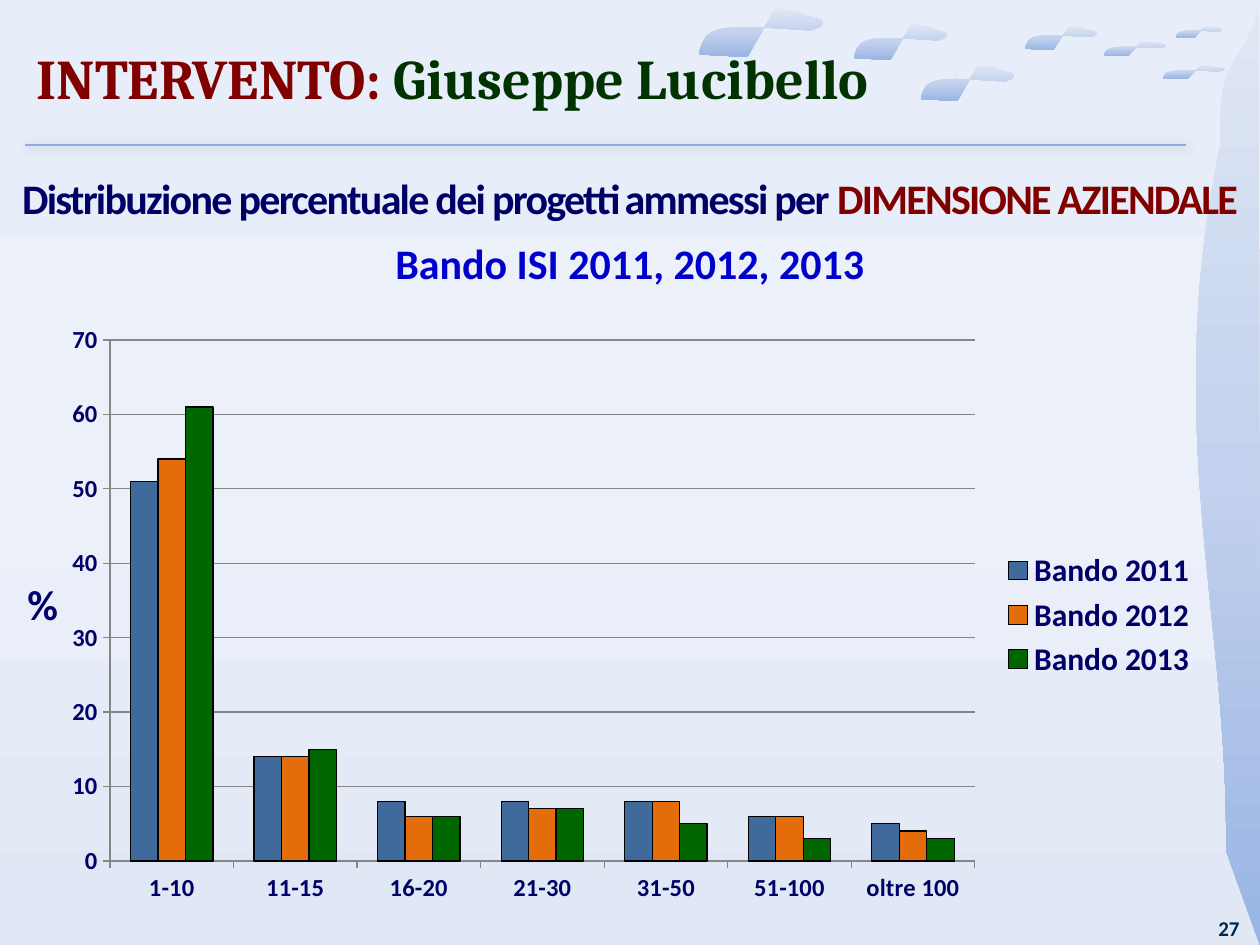
from copy import deepcopy

from lxml import etree
from pptx import Presentation
from pptx.chart.data import CategoryChartData
from pptx.dml.color import RGBColor
from pptx.enum.chart import XL_CHART_TYPE, XL_LEGEND_POSITION, XL_TICK_MARK
from pptx.enum.shapes import MSO_CONNECTOR
from pptx.enum.text import MSO_ANCHOR, MSO_AUTO_SIZE, PP_ALIGN
from pptx.oxml import parse_xml
from pptx.oxml.ns import nsdecls, qn
from pptx.util import Emu, Pt

COLUMNS = XL_CHART_TYPE.COLUMN_CLUSTERED
LEGEND_RIGHT = XL_LEGEND_POSITION.RIGHT
TICK_OUTSIDE = XL_TICK_MARK.OUTSIDE
TICK_NONE = XL_TICK_MARK.NONE
STRAIGHT = MSO_CONNECTOR.STRAIGHT
MIDDLE, TOP = MSO_ANCHOR.MIDDLE, MSO_ANCHOR.TOP
NO_FIT, GROW = MSO_AUTO_SIZE.NONE, MSO_AUTO_SIZE.SHAPE_TO_FIT_TEXT
LEFT, CENTER = PP_ALIGN.LEFT, PP_ALIGN.CENTER

NAVY = RGBColor(0x00, 0x00, 0x66)
BLUE = RGBColor(0x00, 0x00, 0xCC)
MAROON = RGBColor(0x80, 0x00, 0x00)
DARK_GREEN = RGBColor(0x00, 0x33, 0x00)
NUMBER_BLUE = RGBColor(0x00, 0x26, 0x4C)
RULE_BLUE = RGBColor(0x8F, 0xAC, 0xE1)
GREY = RGBColor(0x86, 0x86, 0x86)
BLACK = RGBColor(0x00, 0x00, 0x00)
STEEL = RGBColor(0x40, 0x69, 0x9C)
ORANGE = RGBColor(0xE4, 0x6C, 0x0A)
GREEN = RGBColor(0x00, 0x66, 0x00)
SKY = [RGBColor(0xE7, 0xED, 0xF9), RGBColor(0xEB, 0xF0, 0xF9), RGBColor(0xE1, 0xE8, 0xF5)]
HAZE = [RGBColor(0xE1, 0xE8, 0xF5), RGBColor(0xC2, 0xD1, 0xED), RGBColor(0x9A, 0xB5, 0xE4)]

EMU_PER_PX = 914400 / 126
GRID = 100

WAVE_BOX = (1196, 0, 64, 945)
WAVE = [
    [(39, 15)],
    [(31, 5), (84, 7), (98, 0)],
    [(100, 100)],
    [(47, 90)],
    [(51, 65), (-55, 45), (39, 15)],
]
CLOUD_BOXES = [
    (699, 8, 124, 49), (854, 24, 93, 36), (1025, 26, 72, 24), (1176, 26, 47, 12),
    (1163, 65, 62, 14), (1104, 41, 62, 15), (921, 65, 93, 36),
]
CLOUD = [
    [(90, 46)],
    [(107, 33), (100, 23), (91, 18)],
    [(83, 13), (69, -5), (61, 3)],
    [(39, 100)],
    [(0, 95)],
    [(5, 33), (15, 33), (90, 46)],
]

CATEGORIES = ["1-10", "11-15", "16-20", "21-30", "31-50", "51-100", "oltre 100"]
SERIES = [
    ("Bando 2011", [51, 14, 8, 8, 8, 6, 5], STEEL),
    ("Bando 2012", [54, 14, 6, 7, 8, 6, 4], ORANGE),
    ("Bando 2013", [61, 15, 6, 7, 5, 3, 3], GREEN),
]
CHART_BOX = (49, 314, 1161, 602)
PLOT_BOX = (110, 340, 865, 521)


def px(value):
    """Convert pixels to EMU."""
    return Emu(round(value * EMU_PER_PX))


def apply(target, values):
    """Set each attribute named in a dict."""
    for name, value in values.items():
        setattr(target, name, value)


def place(shape, box):
    """Set the position and size of a shape."""
    apply(shape, dict(zip(("left", "top", "width", "height"), map(px, box))))


def font_values(size, color, name="Calibri"):
    """Return the format values of a bold font."""
    return {"size": Pt(size), "bold": True, "name": name, "color": color}


def format_font(font, values):
    """Apply format values and colour to a font."""
    apply(font, {name: value for name, value in values.items() if name != "color"})
    font.color.rgb = values["color"]


def set_gradient(fill, owner, colors):
    """Give a fill an evenly spaced vertical gradient."""
    fill.gradient()
    fill.gradient_angle = 270
    stop_list = next(owner.iter(qn("a:gsLst")))
    while len(stop_list) < len(colors):
        stop_list.append(deepcopy(stop_list[0]))
    for index, (stop, color) in enumerate(zip(fill.gradient_stops, colors)):
        stop.color.rgb = color
        stop.position = index / (len(colors) - 1)


def curve_outline(geometry, outline):
    """Rewrite a freeform outline with true curves on a unit grid."""
    geometry.set("w", str(GRID))
    geometry.set("h", str(GRID))
    for command in list(geometry):
        geometry.remove(command)
    for index, points in enumerate(outline):
        tag = "a:cubicBezTo" if len(points) == 3 else "a:lnTo" if index else "a:moveTo"
        command = etree.SubElement(geometry, qn(tag))
        for x, y in points:
            etree.SubElement(command, qn("a:pt"), x=str(x), y=str(y))
    etree.SubElement(geometry, qn("a:close"))


def add_outline(slide, outline, box):
    """Draw a hazy outline of lines and curves inside a box."""
    builder = slide.shapes.build_freeform(*outline[0][-1])
    builder.add_line_segments([points[-1] for points in outline[1:]], close=True)
    shape = builder.convert_to_shape()
    curve_outline(next(shape._element.iter(qn("a:path"))), outline)
    place(shape, box)
    shape.shadow.inherit = False
    shape.line.fill.background()
    set_gradient(shape.fill, shape._element, HAZE)


def add_rule(slide):
    """Draw the softly shadowed rule below the title."""
    rule = slide.shapes.add_connector(STRAIGHT, px(25), px(145), px(1186), px(145))
    rule.line.color.rgb = RULE_BLUE
    rule.line.width = Pt(1.25)
    effects = etree.SubElement(rule._element.spPr, qn("a:effectLst"))
    shadow = etree.SubElement(effects, qn("a:outerShdw"), blurRad="76200", dist="12700", dir="2700000")
    color = etree.SubElement(shadow, qn("a:srgbClr"), val="000000")
    etree.SubElement(color, qn("a:alpha"), val="20000")


def write_text(shape, box, paragraphs, frame_values, paragraph_values):
    """Place a shape and fill it with paragraphs of (text, font values, spacing) runs."""
    place(shape, box)
    frame = shape.text_frame
    apply(frame, {"word_wrap": True, **frame_values})
    for index, runs in enumerate(paragraphs):
        paragraph = frame.add_paragraph() if index else frame.paragraphs[0]
        apply(paragraph, paragraph_values)
        for text, values, spacing in runs:
            run = paragraph.add_run()
            run.text = text
            format_font(run.font, values)
            if spacing:
                run.font._element.set("spc", str(spacing * 100))


def add_text(slide, box, paragraphs, **paragraph_values):
    """Add a text box that grows with its text."""
    shape = slide.shapes.add_textbox(0, 0, 0, 0)
    write_text(shape, box, paragraphs, {"auto_size": GROW, "vertical_anchor": TOP}, paragraph_values)


def set_plot_layout(chart):
    """Fix the inner plot area within the chart."""
    x, y, width, height = CHART_BOX
    plot_x, plot_y, plot_width, plot_height = PLOT_BOX
    fractions = {"x": (plot_x - x) / width, "y": (plot_y - y) / height,
                 "w": plot_width / width, "h": plot_height / height}
    parts = "".join(f'<c:{name} val="{value:.4f}"/>' for name, value in fractions.items())
    plot_area = next(chart._chartSpace.iter(qn("c:plotArea")))
    for layout in plot_area.findall(qn("c:layout")):
        plot_area.remove(layout)
    plot_area.insert(0, parse_xml(
        f'<c:layout {nsdecls("c")}><c:manualLayout><c:layoutTarget val="inner"/>'
        f'<c:xMode val="edge"/><c:yMode val="edge"/>{parts}</c:manualLayout></c:layout>'))


def add_column_chart(slide):
    """Add the clustered columns with axes and legend."""
    data = CategoryChartData()
    data.categories = CATEGORIES
    for name, values, _ in SERIES:
        data.add_series(name, values)
    chart = slide.shapes.add_chart(COLUMNS, *map(px, CHART_BOX), data).chart
    apply(chart, {"has_title": False, "has_legend": True})
    format_font(chart.font, {"size": Pt(10), "name": "Calibri", "color": BLACK})
    apply(chart.legend, {"position": LEGEND_RIGHT, "include_in_layout": False})
    format_font(chart.legend.font, font_values(18, NAVY))
    apply(chart.value_axis, {"minimum_scale": 0, "maximum_scale": 70, "major_unit": 10})
    for axis in (chart.category_axis, chart.value_axis):
        apply(axis, {"major_tick_mark": TICK_OUTSIDE, "minor_tick_mark": TICK_NONE})
        format_font(axis.tick_labels.font, font_values(14, NAVY))
        axis.format.line.color.rgb = GREY
    chart.value_axis.major_gridlines.format.line.color.rgb = GREY
    plot = chart.plots[0]
    apply(plot, {"gap_width": 150, "overlap": 0, "vary_by_categories": False})
    for series, (_, _, color) in zip(plot.series, SERIES):
        series.format.fill.solid()
        series.format.fill.fore_color.rgb = color
        series.format.line.color.rgb = BLACK
        series.format.line.width = Pt(0.75)
    set_plot_layout(chart)


def main():
    """Build and save the slide."""
    presentation = Presentation()
    apply(presentation, {"slide_width": px(1260), "slide_height": px(945)})
    slide = presentation.slides.add_slide(presentation.slide_layouts[5])
    set_gradient(slide.background.fill, slide._element, SKY)
    add_outline(slide, WAVE, WAVE_BOX)
    for box in CLOUD_BOXES:
        add_outline(slide, CLOUD, box)
    add_text(slide, (1206, 909, 59, 38), [[("27", font_values(12, NUMBER_BLUE), 0)]])
    add_rule(slide)
    add_column_chart(slide)
    heading = [
        [("Distribuzione percentuale dei progetti ammessi per ", font_values(24, NAVY), -1),
         ("DIMENSIONE AZIENDALE", font_values(24, MAROON), -1)],
        [("Bando ISI 2011, 2012, 2013", font_values(24, BLUE), 0)],
    ]
    add_text(slide, (0, 151, 1260, 145), heading, alignment=CENTER, line_spacing=1.3)
    add_text(slide, (15, 572, 59, 63), [[("%", font_values(24, NAVY), 0)]])
    title = [[("INTERVENTO: ", font_values(32, MAROON, "Cambria"), 0),
              ("Giuseppe Lucibello", font_values(32, DARK_GREEN, "Cambria"), 0)]]
    write_text(slide.shapes.title, (24, 18, 1221, 118), title,
               {"auto_size": NO_FIT, "vertical_anchor": MIDDLE}, {"alignment": LEFT})
    slide.shapes._spTree.append(slide.shapes.title._element)
    presentation.save("out.pptx")


if __name__ == "__main__":
    main()
